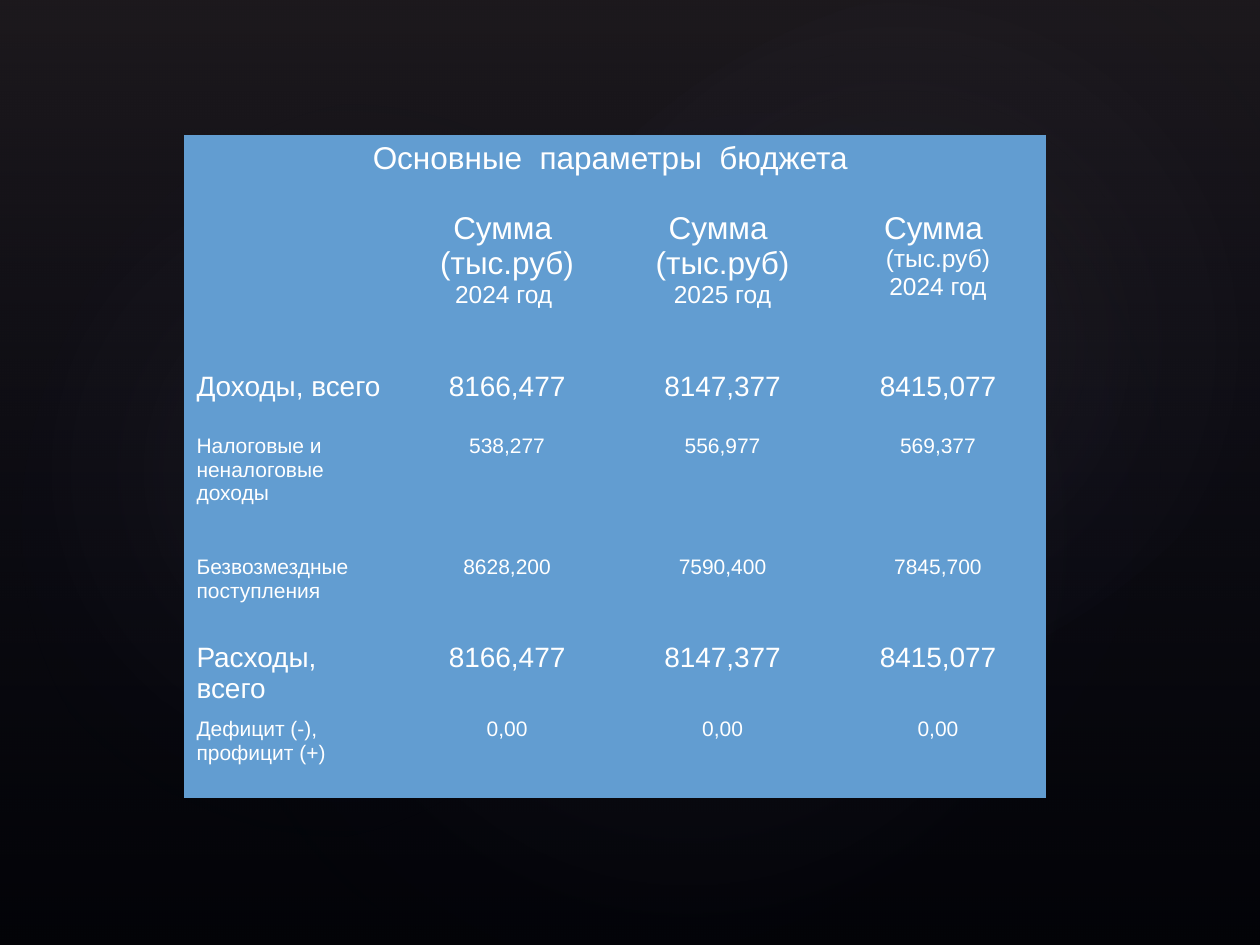
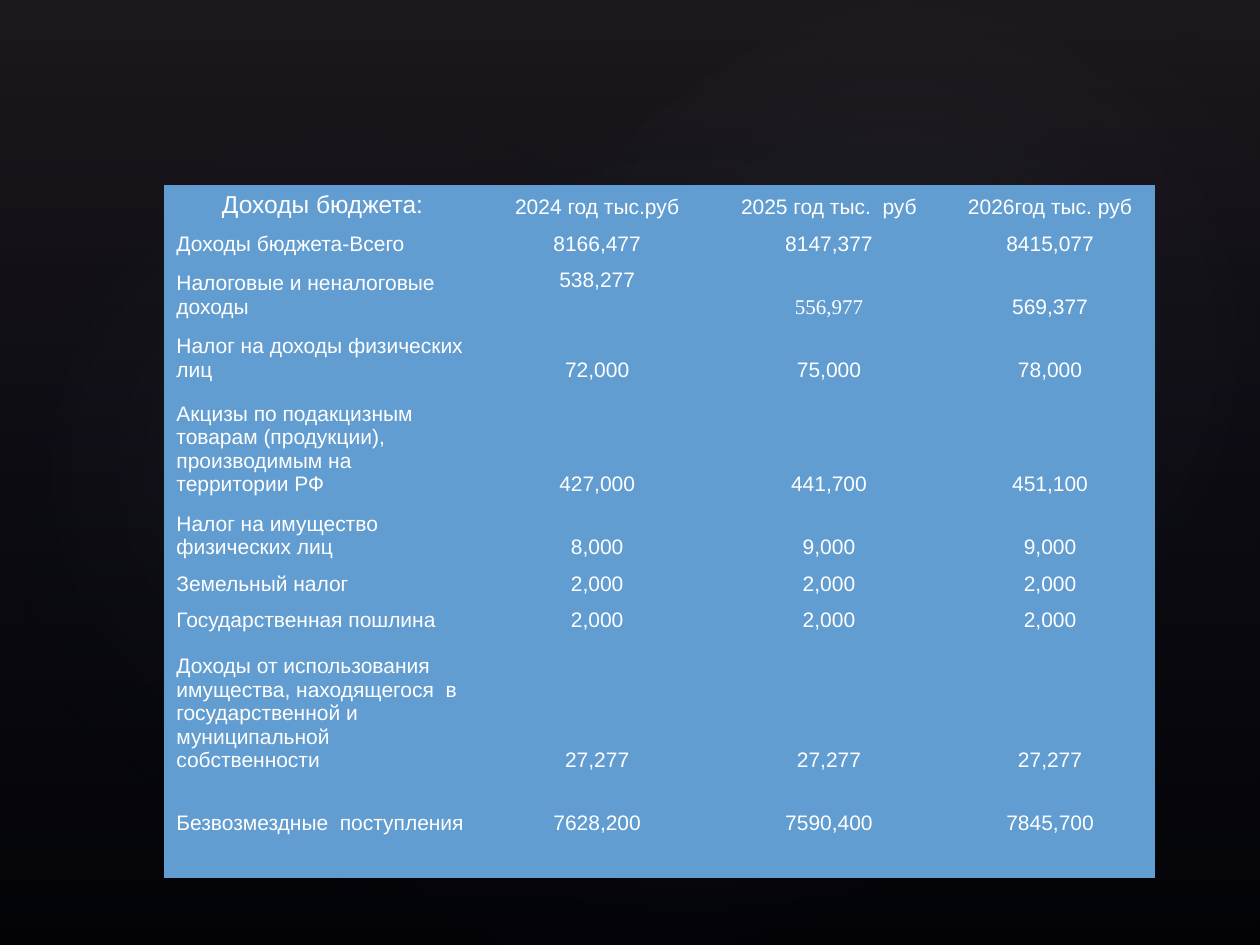
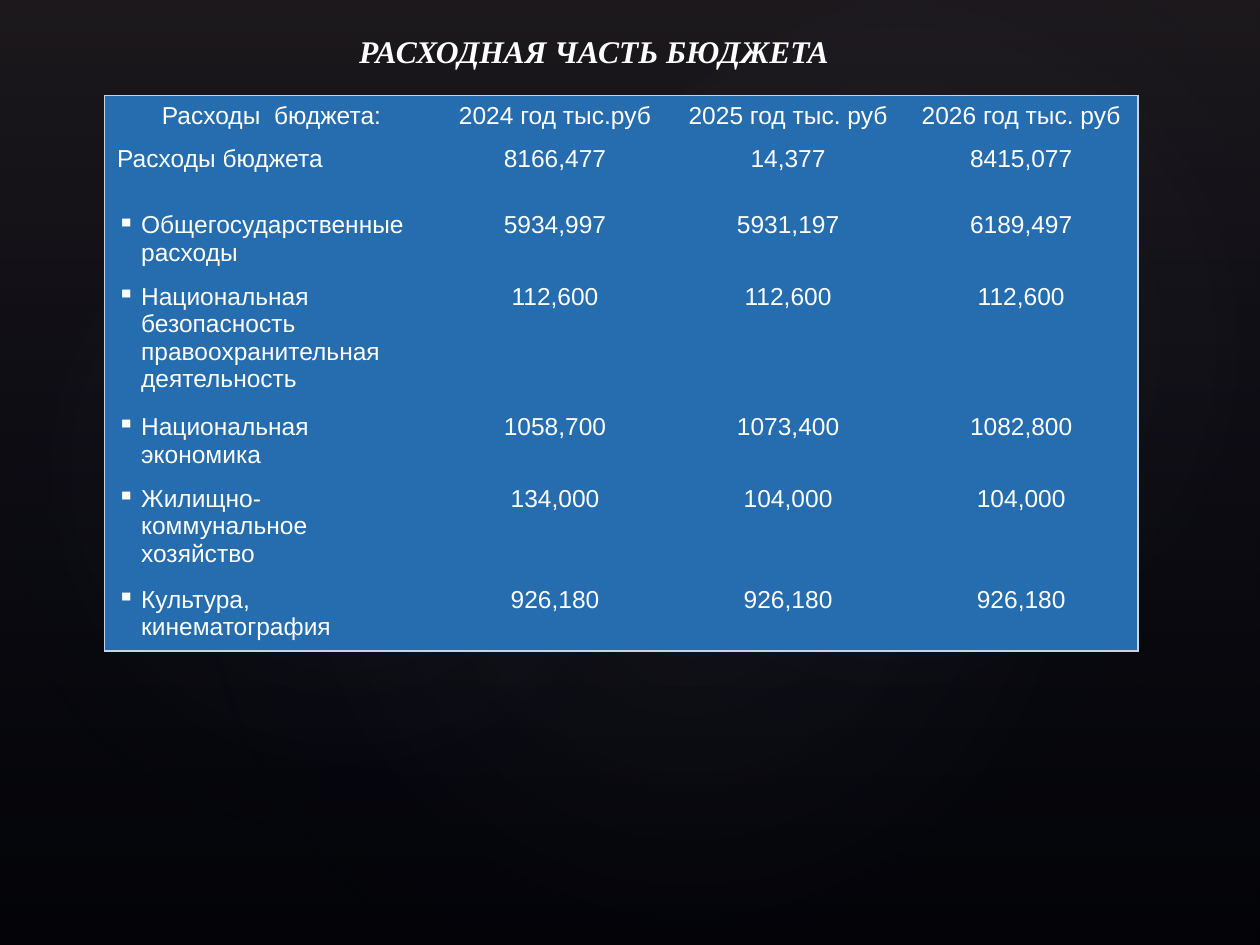
from pptx import Presentation
from pptx.dml.color import RGBColor
from pptx.enum import shapes, text
from pptx.oxml import parse_xml
from pptx.oxml.ns import nsdecls, qn
from pptx.util import Inches, Pt

BLACK = RGBColor(0x00, 0x00, 0x00)
WHITE = RGBColor(0xFF, 0xFF, 0xFF)
MAUVE = RGBColor(0x50, 0x46, 0x52)
NAVY = RGBColor(0x24, 0x28, 0x52)
GLOW = RGBColor(0xC4, 0xBC, 0xC6)
SKY = RGBColor(0x62, 0x9D, 0xD1)
BLUE = RGBColor(0x25, 0x6D, 0xAE)
PALE = RGBColor(0xC5, 0xD5, 0xE9)

BODY_FONT = "Arial"
TITLE_FONT = "Times New Roman"
NO_GRID_STYLE = "{2D5ABB26-0587-4C30-8999-92F81FD0307C}"
LINEAR = '<a:lin ang="5400000" scaled="0"/>'
RADIAL = ('<a:path path="circle">'
          '<a:fillToRect l="50000" t="50000" r="50000" b="50000"/></a:path>')
# left, top, width, height, rotation, opacity at the centre
GLOWS = [
    (1.5, 1.14, 7.92, 6.24, 328.7, 7),
    (-0.3, 1.28, 6.06, 4.9, 294.3, 8),
    (3.58, 0.13, 7.09, 5.2, 328.7, 8),
]


def add_gradient_shape(slide, kind, box, stops, direction):
    """Add a borderless shape; stops are (position %, colour, opacity %)."""
    sp = slide.shapes.add_shape(kind, *map(Inches, box))
    sp.shadow.inherit = False
    sp.line.fill.background()
    sp.fill.background()
    gs = "".join(
        f'<a:gs pos="{pos * 1000}"><a:srgbClr val="{color}">'
        f'<a:alpha val="{alpha * 1000}"/></a:srgbClr></a:gs>'
        for pos, color, alpha in stops)
    grad = parse_xml(f'<a:gradFill {nsdecls("a")} rotWithShape="1">'
                     f'<a:gsLst>{gs}</a:gsLst>{direction}</a:gradFill>')
    props = sp.element.spPr
    props.replace(props.find(qn("a:noFill")), grad)
    return sp


def add_dark_slide(prs):
    slide = prs.slides.add_slide(prs.slide_layouts[6])
    slide.background.fill.solid()
    slide.background.fill.fore_color.rgb = BLACK
    add_gradient_shape(slide, shapes.MSO_SHAPE.RECTANGLE, (0, 0, 10, 7.5),
                       [(0, MAUVE, 36), (100, NAVY, 10)], LINEAR)
    for *box, angle, alpha in GLOWS:
        sp = add_gradient_shape(slide, shapes.MSO_SHAPE.OVAL, box,
                                [(0, GLOW, alpha), (58, NAVY, 0)], RADIAL)
        sp.rotation = angle
    return slide


def set_font(p, size, name=BODY_FONT):
    p.font.name = name
    p.font.size = Pt(size)
    p.font.color.rgb = WHITE


def fill_cell(cell, content, size, align):
    """Content is a string or a list of (line, size)."""
    lines = content if isinstance(content, list) else [(content, size)]
    tf = cell.text_frame
    for i, (line, line_size) in enumerate(lines):
        p = tf.add_paragraph() if i else tf.paragraphs[0]
        if line:
            p.add_run().text = line
        p.alignment = align
        set_font(p, line_size)
    if not content:
        cell.margin_top = cell.margin_bottom = 0


def add_border(cell, side):
    cell._tc.get_or_add_tcPr().append(parse_xml(
        f'<a:ln{side} {nsdecls("a")} w="12700"><a:solidFill>'
        f'<a:srgbClr val="{PALE}"/></a:solidFill></a:ln{side}>'))


def add_bullet(p):
    props = p._p.get_or_add_pPr()
    props.set("marL", str(Inches(0.19)))
    props.set("indent", str(-Inches(0.19)))
    bullet = parse_xml(f'<a:buChar {nsdecls("a")} char="▪"/>')
    props.insert(0, bullet)


def add_budget_table(slide, left, top, widths, rows, fill,
                     anchor=text.MSO_ANCHOR.TOP, framed=False):
    """Rows are (height, font size, cell contents); the first is the header."""
    height = sum(row[0] for row in rows)
    frame = slide.shapes.add_table(
        len(rows), len(widths), Inches(left), Inches(top),
        Inches(sum(widths)), Inches(height))
    frame.element.find(".//" + qn("a:tableStyleId")).text = NO_GRID_STYLE
    table = frame.table
    table.first_row = table.horz_banding = False
    for column, width in zip(table.columns, widths):
        column.width = Inches(width)
    last_row, last_col = len(rows) - 1, len(widths) - 1
    for r, (row_height, size, contents) in enumerate(rows):
        table.rows[r].height = Inches(row_height)
        for c, content in enumerate(contents):
            cell = table.cell(r, c)
            label = c == 0 and r > 0
            fill_cell(cell, content, size,
                      text.PP_ALIGN.LEFT if label else text.PP_ALIGN.CENTER)
            cell.vertical_anchor = anchor
            if framed:
                edges = {"L": c == 0, "R": c == last_col,
                         "T": r == 0, "B": r == last_row}
                for side, outer in edges.items():
                    if outer:
                        add_border(cell, side)
            cell.fill.solid()
            cell.fill.fore_color.rgb = fill
    return table


def add_title(slide, title, box):
    tf = slide.shapes.add_textbox(*map(Inches, box)).text_frame
    tf.word_wrap = True
    tf.vertical_anchor = text.MSO_ANCHOR.BOTTOM
    tf.margin_left = Inches(0.3)
    p = tf.paragraphs[0]
    p.add_run().text = title
    set_font(p, 18, TITLE_FONT)
    p.font.bold = p.font.italic = True


def build_parameters(prs):
    def heading(year, unit_size):
        return [("Сумма ", 18), ("(тыс.руб)", unit_size), (year, 14)]

    totals = ["8166,477", "8147,377", "8415,077"]
    rows = [
        (0.55, 18, ["Основные  параметры  бюджета ", "", "", ""]),
        (1.28, 18, ["", heading("2024 год ", 18), heading("2025 год", 18),
                    heading("2024 год", 14)]),
        (0.5, 16, ["Доходы, всего", *totals]),
        (0.96, 12, ["Налоговые и неналоговые доходы",
                    "538,277", "556,977", "569,377"]),
        (0.69, 12, ["Безвозмездные  поступления",
                    "8628,200", "7590,400", "7845,700"]),
        (0.5, 16, ["Расходы, всего", *totals]),
        (0.69, 12, ["Дефицит (-), профицит (+)"] + ["0,00"] * 3),
    ]
    table = add_budget_table(add_dark_slide(prs), 1.46, 1.07, [1.71] * 4,
                             rows, SKY)
    table.cell(0, 0).merge(table.cell(0, 3))


def build_income(prs):
    rows = [
        (0.29, 12, [[("Доходы бюджета:", 14)], "2024 год тыс.руб",
                    "2025 год тыс.  руб", "2026год тыс. руб"]),
        (0.29, 12, ["Доходы бюджета-Всего",
                    "8166,477", "8147,377", "8415,077"]),
        (0.5, 12, ["Налоговые и неналоговые  доходы",
                   "538,277", "556,977", "569,377"]),
        (0.5, 12, ["Налог на доходы физических лиц",
                   "72,000", "75,000", "78,000"]),
        (0.91, 12, ["Акцизы по подакцизным товарам (продукции), "
                    "производимым на территории РФ",
                    "427,000", "441,700", "451,100"]),
        (0.5, 12, ["Налог на имущество физических лиц",
                   "8,000", "9,000", "9,000"]),
        (0.29, 12, ["Земельный налог"] + ["2,000"] * 3),
        (0.29, 12, ["Государственная пошлина"] + ["2,000"] * 3),
        (1.11, 12, ["Доходы от использования имущества, находящегося  в "
                    "государственной и муниципальной собственности"]
         + ["27,277"] * 3),
        (0.5, 12, ["Безвозмездные  поступления",
                   "7628,200", "7590,400", "7845,700"]),
        (0.29, 12, [""] * 4),
    ]
    table = add_budget_table(add_dark_slide(prs), 1.3, 1.47,
                             [2.52, 1.84, 1.84, 1.67], rows, SKY,
                             anchor=text.MSO_ANCHOR.BOTTOM)
    table.cell(2, 1).vertical_anchor = text.MSO_ANCHOR.TOP
    table.cell(2, 2).text_frame.paragraphs[0].font.name = TITLE_FONT


def build_spending(prs):
    rows = [
        (0.34, 14, ["Расходы  бюджета:", "2024 год тыс.руб",
                    "2025 год тыс. руб", "2026 год тыс. руб"]),
        (0.53, 14, ["Расходы бюджета", "8166,477", "14,377", "8415,077"]),
        (0.53, 14, ["Общегосударственные расходы",
                    "5934,997", "5931,197", "6189,497"]),
        (0.97, 14, ["Национальная безопасность правоохранительная "
                    "деятельность"] + ["112,600"] * 3),
        (0.53, 14, ["Национальная  экономика",
                    "1058,700", "1073,400", "1082,800"]),
        (0.75, 14, ["Жилищно-коммунальное хозяйство",
                    "134,000", "104,000", "104,000"]),
        (0.53, 14, ["Культура, кинематография"] + ["926,180"] * 3),
    ]
    slide = add_dark_slide(prs)
    add_title(slide, "РАСХОДНАЯ ЧАСТЬ БЮДЖЕТА", (2.55, 0.21, 7.45, 0.39))
    table = add_budget_table(slide, 0.83, 0.76, [2.65, 1.85, 1.85, 1.85],
                             rows, BLUE, framed=True)
    for r in range(2, len(rows)):
        add_bullet(table.cell(r, 0).text_frame.paragraphs[0])


def main():
    prs = Presentation()
    prs.slide_width, prs.slide_height = Inches(10), Inches(7.5)
    build_parameters(prs)
    build_income(prs)
    build_spending(prs)
    prs.save("out.pptx")


if __name__ == "__main__":
    main()
